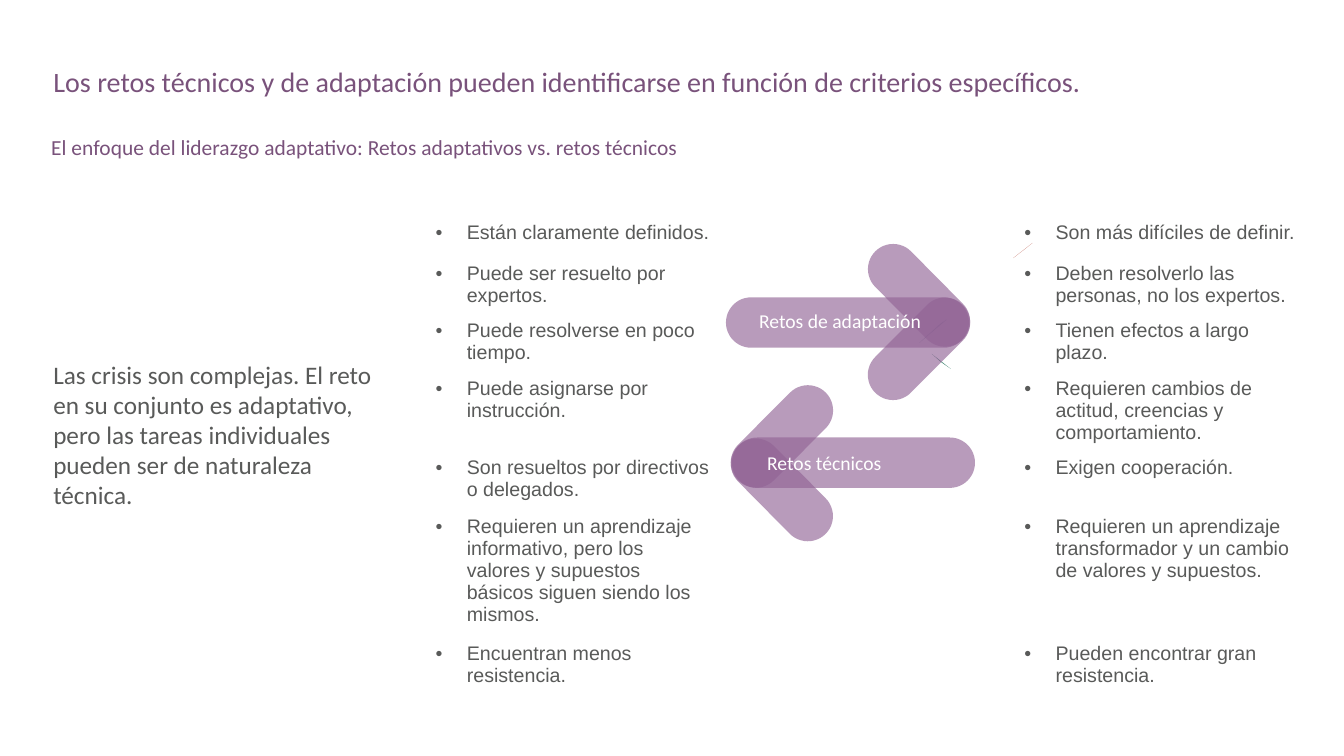
"""Build the slide on technical versus adaptive challenges."""
from lxml.etree import SubElement
from pptx import Presentation
from pptx.dml.color import RGBColor
from pptx.enum.shapes import MSO_SHAPE as Shape
from pptx.enum.text import MSO_ANCHOR as Anchor, MSO_AUTO_SIZE as Fit, PP_ALIGN as Align
from pptx.oxml.ns import qn
from pptx.util import Inches, Pt

GRAY, PLUM, MAUVE, WHITE = "595A59", "79527B", "916395", "FFFFFF"


def color(text):
    return RGBColor.from_string(text)


def write(frame, text, size, tint, face="Calibri", gap=None, anchor=Anchor.TOP):
    frame.word_wrap = True
    frame.vertical_anchor = anchor
    para = frame.paragraphs[0]
    para.text = text
    para.alignment = Align.LEFT
    if gap:
        para.line_spacing = gap
    para.font.size = Pt(size)
    para.font.name = face
    para.font.color.rgb = color(tint)


deck = Presentation()
deck.slide_width, deck.slide_height = Inches(13.33), Inches(7.5)
slide = deck.slides.add_slide(deck.slide_layouts[5])
shapes = slide.shapes

title = shapes.title
title.left, title.top = Inches(0.43), Inches(0.63)
title.width, title.height = Inches(12.54), Inches(0.64)
title.text_frame.auto_size = Fit.NONE
write(title.text_frame, "Los retos técnicos y de adaptación pueden identificarse en función de criterios específicos.",
      20, PLUM, gap=0.9)

rows = [
    (0.4, "Están claramente definidos.", "Son más difíciles de definir."),
    (0.57, "Puede ser resuelto por expertos.", "Deben resolverlo las personas, no los expertos."),
    (0.57, "Puede resolverse en poco tiempo.", "Tienen efectos a largo plazo."),
    (0.79, "Puede asignarse por instrucción.", "Requieren cambios de actitud, creencias y comportamiento."),
    (0.58, "Son resueltos por directivos o delegados.", "Exigen cooperación."),
    (1.26, "Requieren un aprendizaje informativo, pero los valores y supuestos básicos siguen siendo los mismos.",
     "Requieren un aprendizaje transformador y un cambio de valores y supuestos."),
    (0.57, "Encuentran menos resistencia.", "Pueden encontrar gran resistencia."),
]
tall = sum(row[0] for row in rows)
grid = shapes.add_table(len(rows), 3, Inches(4.22), Inches(2.15), Inches(8.76), Inches(tall)).table
grid.first_row = grid.horz_banding = False
for col in grid.columns:
    col.width = Inches(2.92)
for i, (high, tech, adapt) in enumerate(rows):
    grid.rows[i].height = Inches(high)
    for j, text in enumerate((tech, "", adapt)):
        cell = grid.cell(i, j)
        cell.fill.solid()
        cell.fill.fore_color.rgb = color(WHITE)
        if text:
            props = cell.text_frame.paragraphs[0]._p.get_or_add_pPr()
            props.set("marL", str(Inches(0.31)))
            props.set("indent", str(-Inches(0.31)))
            tint = SubElement(SubElement(props, qn("a:buClr")), qn("a:srgbClr"))
            tint.set("val", GRAY)
            SubElement(props, qn("a:buFont")).set("typeface", "Arial")
            SubElement(props, qn("a:buChar")).set("char", "•")
            write(cell.text_frame, text, 14, GRAY, "Arial")

notes = [
    (0.43, 1.79, 3.49, 5.04, "Las crisis son complejas. El reto en su conjunto es adaptativo, pero las tareas "
     "individuales pueden ser de naturaleza técnica.", 18, GRAY, None, Anchor.MIDDLE),
    (0.41, 1.35, 12.56, 0.28, "El enfoque del liderazgo adaptativo: Retos adaptativos vs. retos técnicos",
     15.3, PLUM, 0.7, Anchor.TOP),
]
for x, y, wide, high, text, size, tint, gap, anchor in notes:
    box = shapes.add_textbox(Inches(x), Inches(y), Inches(wide), Inches(high))
    write(box.text_frame, text, size, tint, gap=gap, anchor=anchor)

slivers = [
    ("53A58F", (8.78, 3.11), (9.12, 3.4)),
    ("498977", (9.39, 3.17), (9.33, 3.21), (9.12, 3.4)),
    ("53A58F", (9.12, 3.4), (8.78, 3.69)),
    ("498977", (9.24, 3.51), (9.33, 3.59), (9.43, 3.66)),
    ("B14434", (10.24, 2.41), (10.14, 2.49), (10.05, 2.56)),
]
for tint, start, *rest in slivers:
    path = shapes.build_freeform(Inches(start[0]), Inches(start[1]))
    path.add_line_segments([(Inches(x), Inches(y)) for x, y in rest])
    sliver = path.convert_to_shape()
    sliver.shadow.inherit = False
    sliver.fill.solid()
    sliver.fill.fore_color.rgb = color(tint)
    sliver.line.fill.background()

arrows = [
    ("Retos de adaptación", 7.43, 2.68, 1.96,
     [(7.2, 2.95, 2.41, 0), (8.5, 3.21, 1.23, 314.9), (8.5, 2.68, 1.23, 45.3)]),
    ("Retos técnicos", 7.51, 4.09, 1.87,
     [(7.26, 4.34, 2.41, 180), (7.14, 4.08, 1.23, 134.9), (7.14, 4.61, 1.23, 225.3)]),
]
for text, left, top, span, bars in arrows:
    for x, y, wide, turn in bars:
        bar = shapes.add_shape(Shape.ROUNDED_RECTANGLE, Inches(x), Inches(y), Inches(wide), Inches(0.5))
        bar.adjustments[0] = 0.5
        bar.rotation = turn
        bar.shadow.inherit = False
        bar.fill.solid()
        bar.fill.fore_color.rgb = color(MAUVE)
        tint = bar._element.spPr.find(qn("a:solidFill")).find(qn("a:srgbClr"))
        SubElement(tint, qn("a:alpha")).set("val", "64000")
        bar.line.fill.background()
    label = shapes.add_textbox(Inches(left), Inches(top), Inches(span), Inches(1))
    write(label.text_frame, text, 14, WHITE, anchor=Anchor.MIDDLE)

deck.save("out.pptx")
